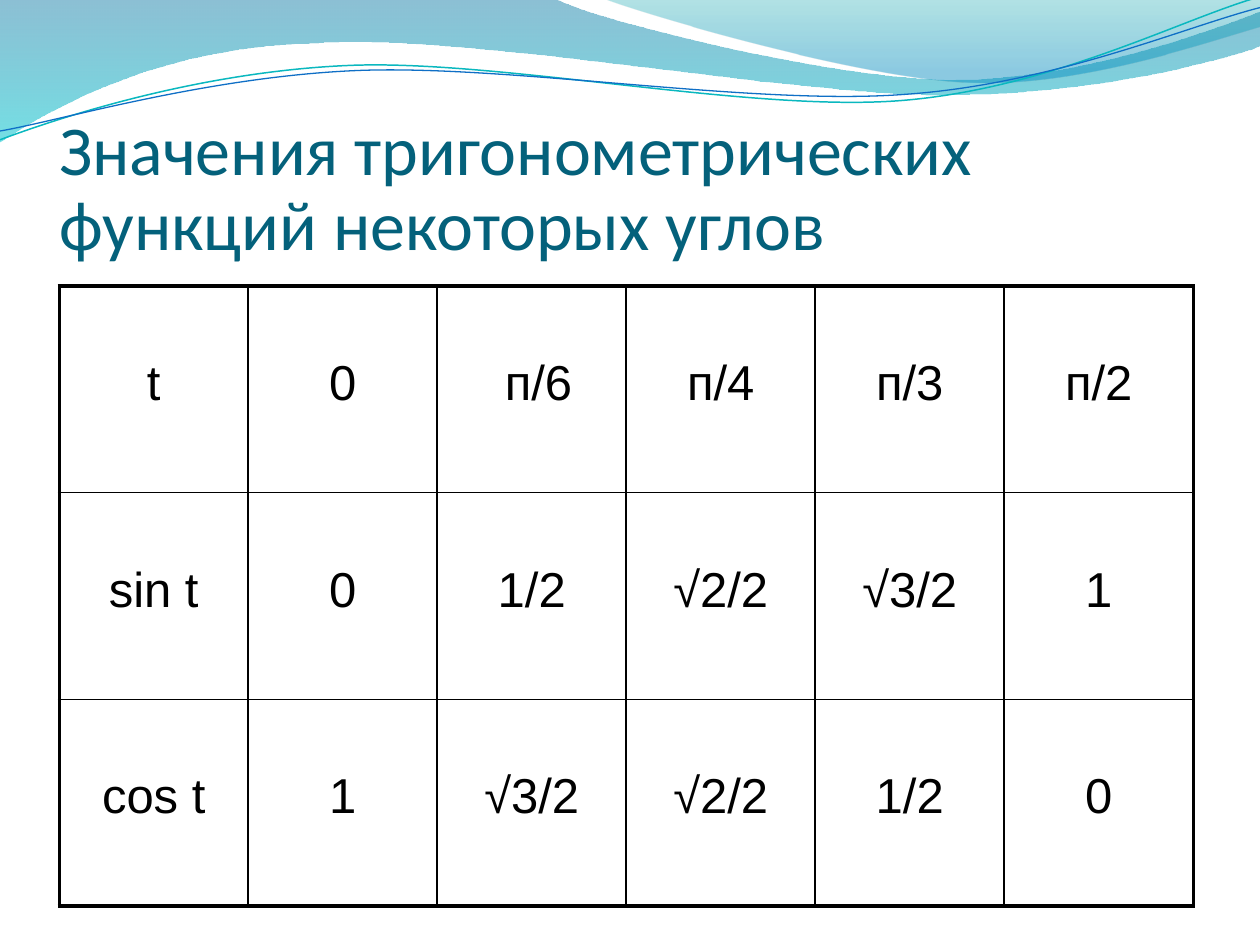
from dataclasses import dataclass
from math import cos, radians, sin

from lxml import etree
from pptx import Presentation
from pptx import util as u
from pptx.dml.color import RGBColor
from pptx.enum import text
from pptx.oxml.ns import qn

Inches = u.Inches


@dataclass(frozen=True)
class Theme:
    title_font: str = "Calibri"
    body_font: str = "Arial"
    title_size: float = 40
    body_size: float = 28
    title: str = "04617B"
    ink: str = "000000"
    outer_border: float = 2.25
    inner_border: float = 1
    # Gradient stops: position, colour, opacity in percent
    wide_wave: tuple = ((0, "0074A1", 45), (1, "00C6CF", 55))
    corner_wave: tuple = ((0, "00A1A9", 30), (0.8, "008BBF", 45))
    # Lines: colour, width in points
    teal_line: tuple = ("0AB8BF", 0.85)
    blue_line: tuple = ("0F6FC6", 0.75)


T = Theme()
LINE_ROTATION = 357.3


@dataclass(frozen=True)
class Curve:
    """A box and a start point followed by segments: 2 numbers for a line, 6 for a Bezier."""
    box: tuple
    points: tuple
    rotation: float = 0


WIDE_WAVE = Curve((-0.01, -0.01, 10.02, 1.14), (
    (0, 0), (4.4, -0.01), (4.76, 0.17, 6.64, 0.63, 7.58, 0.63),
    (8.53, 0.63, 9.58, 0.26, 10, 0.09), (10.01, 0.36),
    (9.83, 0.44, 8.7, 0.76, 7.46, 0.75), (6.22, 0.75, 3.82, 0.28, 2.57, 0.34),
    (1.29, 0.36, 0.46, 0.83, -0.01, 1.13), (0, 0),
))
CORNER_WAVE = Curve((4.79, -0.01, 5.21, 0.7), (
    (4.79, -0.01), (5.09, 0.11, 6.82, 0.62, 7.69, 0.65),
    (8.56, 0.69, 9.61, 0.32, 10, 0.21), (10, 0), (4.79, -0.01),
))
TEAL_CURVE = Curve((-0.02, 0.22, 10.02, 0.71), (
    (0, 1.11), (0.48, 0.93, 1.58, 0.57, 2.77, 0.52),
    (3.95, 0.47, 5.93, 0.89, 7.13, 0.8), (8.33, 0.71, 9.38, 0.15, 9.98, -0.02),
), LINE_ROTATION)
BLUE_CURVE = Curve((-0.02, 0.3, 10.03, 0.58), (
    (0, 1.04), (0.47, 0.96, 1.64, 0.61, 2.83, 0.56),
    (4.03, 0.51, 5.97, 0.84, 7.17, 0.75), (8.36, 0.67, 9.41, 0.21, 10, 0.06),
), LINE_ROTATION)

TITLE = "Значения тригонометрических функций некоторых углов"
VALUES = [
    ["t", "0", " п/6", "п/4", "п/3", "п/2"],
    ["sin t", "0", "1/2", "√2/2", "√3/2", "1"],
    ["cos t", "1", "√3/2", "√2/2", "1/2", "0"],
]


def set_attrs(obj, **values):
    for name, value in values.items():
        setattr(obj, name, value)


def style_font(font, name, size, color):
    set_attrs(font, name=name, size=u.Pt(size), bold=False)
    font.color.rgb = RGBColor.from_string(color)


def local_points(curve):
    """Give each segment as points in the curve's unrotated box."""
    left, top, width, height = curve.box
    angle = radians(-curve.rotation)

    def to_local(x, y):
        dx, dy = x - left - width / 2, y - top - height / 2
        return (Inches(dx * cos(angle) - dy * sin(angle) + width / 2),
                Inches(dx * sin(angle) + dy * cos(angle) + height / 2))

    return [[to_local(*xy) for xy in zip(seg[::2], seg[1::2])] for seg in curve.points]


def add_curve(s, curve, left, top, close):
    segments = local_points(curve)
    builder = s.shapes.build_freeform(*segments[0][0])
    builder.add_line_segments([seg[-1] for seg in segments[1:]], close=close)
    sp = builder.convert_to_shape()
    x, y, width, height = map(Inches, curve.box)
    set_attrs(sp, left=left + x, top=top + y, width=width, height=height,
              rotation=curve.rotation)
    sp.shadow.inherit = False

    outline = next(sp._element.spPr.iter(qn("a:path")))
    outline.set("w", str(width))
    outline.set("h", str(height))
    for node, seg in zip(list(outline), segments):
        if len(seg) == 3:
            node.tag = qn("a:cubicBezTo")
        for pt in list(node):
            node.remove(pt)
        for px, py in seg:
            etree.SubElement(node, qn("a:pt"), x=str(px), y=str(py))
    return sp


def add_waves(s, left, top):
    for curve, stops in ((WIDE_WAVE, T.wide_wave), (CORNER_WAVE, T.corner_wave)):
        sp = add_curve(s, curve, left, top, close=True)
        sp.line.fill.background()
        sp.fill.gradient()
        sp.fill.gradient_angle = 270
        for stop, (position, color, _) in zip(sp.fill.gradient_stops, stops):
            stop.position = position
            stop.color.rgb = RGBColor.from_string(color)
        clrs = sp._element.spPr.iter(qn("a:srgbClr"))
        for clr, (_, _, opacity) in zip(clrs, stops):
            etree.SubElement(clr, qn("a:alpha"), val=str(opacity * 1000))
    for curve, (color, width) in ((TEAL_CURVE, T.teal_line), (BLUE_CURVE, T.blue_line)):
        sp = add_curve(s, curve, left, top, close=False)
        sp.fill.background()
        sp.line.color.rgb = RGBColor.from_string(color)
        sp.line.width = u.Pt(width)


def place_title(s, left, top, width, height):
    sp = s.shapes.title
    s.shapes._spTree.append(sp._element)  # in front of the waves
    set_attrs(sp, left=left, top=top, width=width, height=height)
    tf = sp.text_frame
    set_attrs(tf, word_wrap=True, auto_size=text.MSO_AUTO_SIZE.NONE,
              vertical_anchor=text.MSO_ANCHOR.BOTTOM, margin_left=0, margin_right=0,
              margin_top=Inches(0.05), margin_bottom=0)
    p = tf.paragraphs[0]
    set_attrs(p, text=TITLE, alignment=text.PP_ALIGN.LEFT, line_spacing=0.9)
    style_font(p.runs[0].font, T.title_font, T.title_size, T.title)


def set_borders(cell, outer_sides):
    tcPr = cell._tc.get_or_add_tcPr()
    for i, side in enumerate("LRTB"):
        width = T.outer_border if side in outer_sides else T.inner_border
        ln = etree.Element(qn(f"a:ln{side}"), w=str(u.Pt(width)))
        fill = etree.SubElement(ln, qn("a:solidFill"))
        etree.SubElement(fill, qn("a:srgbClr"), val=T.ink)
        tcPr.insert(i, ln)


def add_values(s, left, top, width, height):
    n_rows, n_cols = len(VALUES), len(VALUES[0])
    table = s.shapes.add_table(n_rows, n_cols, left, top, width, height).table
    set_attrs(table, first_row=False, horz_banding=False)
    for i, row in enumerate(VALUES):
        for j, value in enumerate(row):
            cell = table.cell(i, j)
            cell.fill.background()
            set_attrs(cell, vertical_anchor=text.MSO_ANCHOR.MIDDLE,
                      margin_bottom=Inches(0.14))
            p = cell.text_frame.paragraphs[0]
            set_attrs(p, text=value, alignment=text.PP_ALIGN.CENTER)
            style_font(p.runs[0].font, T.body_font, T.body_size, T.ink)
            edges = {"L": j == 0, "R": j == n_cols - 1, "T": i == 0, "B": i == n_rows - 1}
            set_borders(cell, [side for side, outer in edges.items() if outer])


def main():
    prs = Presentation()
    set_attrs(prs, slide_width=Inches(10), slide_height=Inches(7.5))
    s = prs.slides.add_slide(prs.slide_layouts[5])
    left, width = Inches(0.47), Inches(9)
    add_waves(s, 0, 0)
    place_title(s, left, Inches(0.86), width, Inches(1.25))
    add_values(s, left, Inches(2.27), width, Inches(4.92))
    prs.save("out.pptx")


if __name__ == "__main__":
    main()
